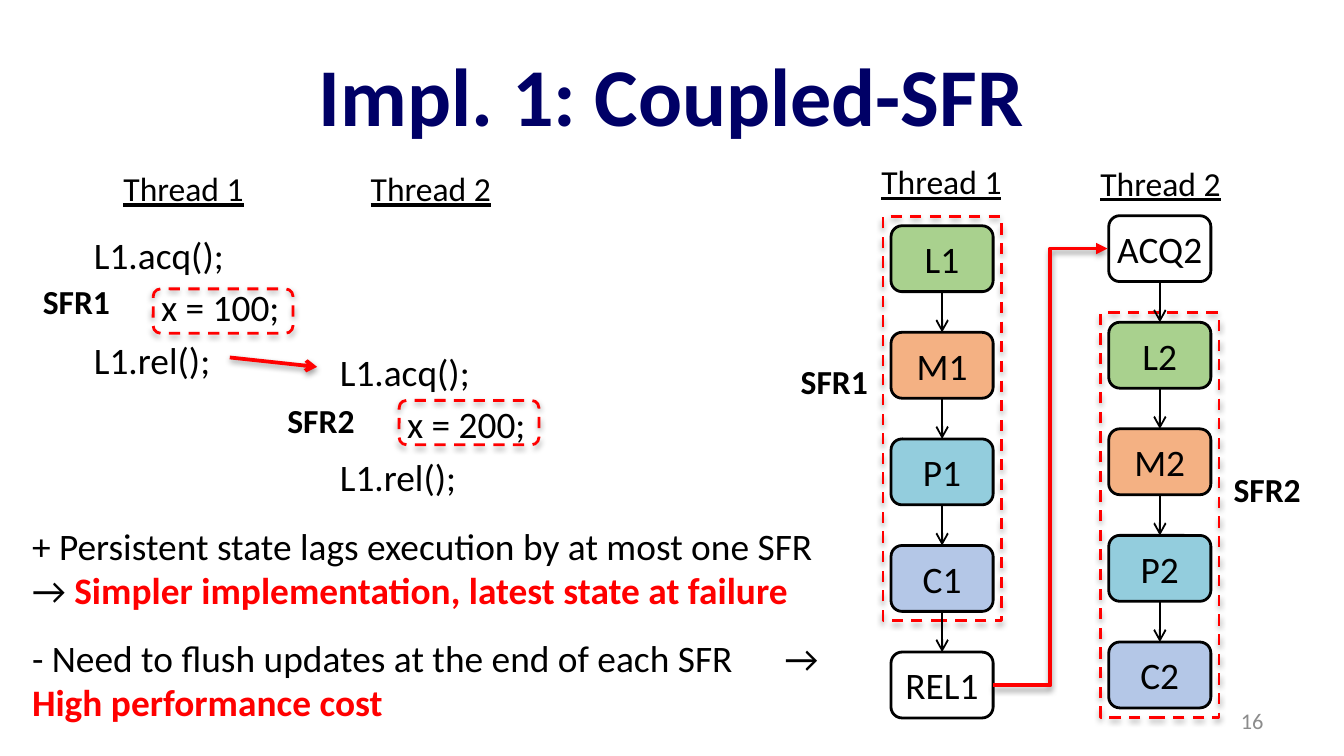
from lxml import etree
from pptx import Presentation
from pptx.dml.color import RGBColor
from pptx.enum.dml import MSO_LINE
from pptx.enum.shapes import MSO_CONNECTOR, MSO_SHAPE
from pptx.enum.text import MSO_ANCHOR, PP_ALIGN
from pptx.oxml import parse_xml
from pptx.oxml.ns import nsdecls, qn
from pptx.util import Inches, Pt

LEFT, CENTER, RIGHT = PP_ALIGN.LEFT, PP_ALIGN.CENTER, PP_ALIGN.RIGHT
TOP, MIDDLE = MSO_ANCHOR.TOP, MSO_ANCHOR.MIDDLE
STRAIGHT, ELBOW = MSO_CONNECTOR.STRAIGHT, MSO_CONNECTOR.ELBOW
RECTANGLE, ROUNDED = MSO_SHAPE.RECTANGLE, MSO_SHAPE.ROUNDED_RECTANGLE
DASH = MSO_LINE.DASH

COLORS = {
    "navy": "000066", "black": "000000", "red": "FF0000", "gray": "8C8C8C",
    "lock": "A9D18E", "modify": "F4B183", "persist": "93CDDD", "commit": "B4C7E7",
}

deck = Presentation()
deck.slide_width = Inches(10)
deck.slide_height = deck.slide_width * 9 // 16
page = deck.slides.add_slide(deck.slide_layouts[6])
CELL = deck.slide_width / 100


def write(shape, paragraphs, align=LEFT, anchor=TOP, wrap=True, tab=None, gap=0):
    frame = shape.text_frame
    frame.word_wrap = wrap
    frame.vertical_anchor = anchor
    for index, spans in enumerate(paragraphs):
        para = frame.add_paragraph() if index else frame.paragraphs[0]
        para.alignment = align
        para.space_before = Pt(gap if index else 0)
        if tab:
            stops = etree.SubElement(para._p.get_or_add_pPr(), qn("a:tabLst"))
            etree.SubElement(stops, qn("a:tab"), pos=str(int(tab * CELL)), algn="l")
        for text, color, formats in spans:
            span = para.add_run()
            span.text = text
            span.font.color.rgb = RGBColor.from_string(COLORS[color])
            for name, value in {"name": "Calibri", "size": Pt(20), **formats}.items():
                setattr(span.font, name, value)


def outline(shape, color, width, dash=None, head=None, shadow=None):
    shape.line.color.rgb = RGBColor.from_string(COLORS[color])
    shape.line.width = Pt(width)
    if dash:
        shape.line.dash_style = dash
    properties = shape._element.spPr
    if head:
        etree.SubElement(properties.find(qn("a:ln")), qn("a:tailEnd"), type=head)
    for old in properties.findall(qn("a:effectLst")):
        properties.remove(old)
    effects = etree.SubElement(properties, qn("a:effectLst"))
    if shadow:
        effects.append(parse_xml(
            f'<a:outerShdw {nsdecls("a")} blurRad="40000" dist="{Pt(shadow[1])}" dir="5400000" '
            f'rotWithShape="0"><a:srgbClr val="{COLORS["black"]}">'
            f'<a:alpha val="{shadow[0] * 1000}"/></a:srgbClr></a:outerShdw>'))


BOLD, UNDERLINE = {"size": Pt(18), "bold": True}, {"size": Pt(18), "underline": True}
FRAME_SHADOW, ARROW_SHADOW = (35, 1.8), (38, 1.6)

labels = [
    ("Impl. 1: Coupled-SFR", 5, 2.3, 90, 9.4, "navy", {"size": Pt(44), "bold": True}, CENTER, MIDDLE),
    ("16", 71.7, 52.1, 23.3, 3, "gray", {"size": Pt(12)}, RIGHT, MIDDLE),
]
for text, left, top in [("SFR1", 2.2, 20.4), ("SFR2", 20.4, 29.3),
                        ("SFR1", 58.6, 26.4), ("SFR2", 90.8, 34.4)]:
    labels.append((text, left, top, 7.3, 4, "black", BOLD, LEFT, TOP))
for text, left, top, align in [("Thread 1", 8.2, 12, LEFT), ("Thread 2", 26.6, 12, LEFT),
                               ("Thread 1", 64.4, 11.5, CENTER), ("Thread 2", 80.7, 11.6, CENTER)]:
    labels.append((text, left, top, 11.3, 4, "black", UNDERLINE, align, TOP))
for text, left, top, width, height, color, formats, align, anchor in labels:
    box = page.shapes.add_textbox(*(int(n * CELL) for n in (left, top, width, height)))
    write(box, [[(text, color, formats)]], align, anchor)

frames = []
for left, top, value, frame_top in [(6, 16.8, 100, 21.5), (24.3, 25.5, 200, 29.8)]:
    code = page.shapes.add_textbox(*(int(n * CELL) for n in (left, top, 15.8, 13.4)))
    lines = ["L1.acq();", f"\tx = {value};", "L1.rel();"]
    write(code, [[(line, "black", {})] for line in lines], tab=5, gap=4)
    frames.append((ROUNDED, left + 5.4, frame_top, 10.4, 3.3))

summary = page.shapes.add_textbox(*(int(n * CELL) for n in (1.4, 38.4, 60.6, 16.2)))
write(summary, [
    [("+ Persistent state lags execution by at most one SFR → ", "black", {}),
     ("Simpler implementation, latest state at failure", "red", {"bold": True})],
    [("- Need to flush updates at the end of each SFR\t→ ", "black", {}),
     ("High performance cost", "red", {"bold": True})],
], tab=56, gap=12)

STEP, NODE_WIDTH, NODE_HEIGHT = 7.93, 7.6, 4.9
chains = [
    (66.3, 16.8, 0, [("L1", "lock"), ("M1", "modify"), ("P1", "persist"),
                     ("C1", "commit"), ("REL1", None)]),
    (82.5, 16.05, 1, [("ACQ2", None), ("L2", "lock"), ("M2", "modify"),
                      ("P2", "persist"), ("C2", "commit")]),
]
arrows = [
    (STRAIGHT, 17.1, 26.6, 23.6, 27.3, "red", 2, "arrow", ARROW_SHADOW),
    (ELBOW, 73.9, 51, 82.4, 18.5, "red", 2, "triangle", ARROW_SHADOW),
]
for left, top, first_in_region, nodes in chains:
    center = left + NODE_WIDTH / 2
    for row, (text, fill) in enumerate(nodes):
        y = top + row * STEP
        node = page.shapes.add_shape(
            ROUNDED, *(int(n * CELL) for n in (left, y, NODE_WIDTH, NODE_HEIGHT)))
        if fill:
            node.fill.solid()
            node.fill.fore_color.rgb = RGBColor.from_string(COLORS[fill])
        else:
            node.fill.background()
        outline(node, "black", 1.5)
        write(node, [[(text, "black", {})]], CENTER, MIDDLE, wrap=False)
        if row:
            arrows.append((STRAIGHT, center, y - STEP + NODE_HEIGHT, center, y,
                           "black", 1, "arrow", None))
    frames.append((RECTANGLE, left - 0.6, top + first_in_region * STEP - 0.7, 8.8, 30.1))

for kind, left, top, width, height in frames:
    region = page.shapes.add_shape(kind, *(int(n * CELL) for n in (left, top, width, height)))
    region.fill.background()
    outline(region, "red", 1.5, dash=DASH, shadow=FRAME_SHADOW)

for kind, x1, y1, x2, y2, color, width, head, shadow in arrows:
    arrow = page.shapes.add_connector(kind, *(int(n * CELL) for n in (x1, y1, x2, y2)))
    outline(arrow, color, width, head=head, shadow=shadow)

deck.save("out.pptx")
